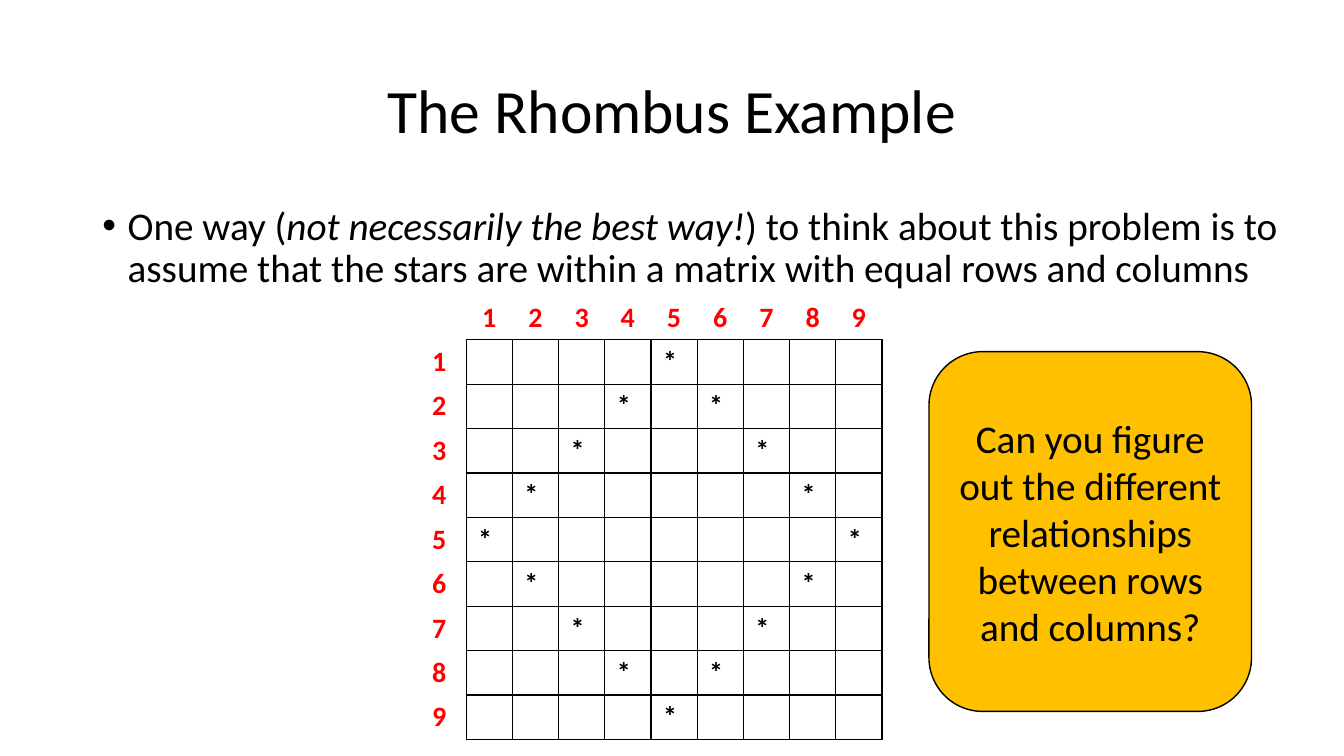
from dataclasses import dataclass

from lxml import etree
from pptx import Presentation
from pptx import util as u
from pptx.dml import color
from pptx.enum import shapes, text
from pptx.oxml import ns


@dataclass(frozen=True)
class Theme:
    font: str = "Calibri"
    ink: str = "000000"
    label: str = "FF0000"
    callout: str = "FFC000"
    title_size: int = 44
    body_size: int = 28
    matrix_size: int = 20
    line_width: int = 1


@dataclass(frozen=True)
class Box:
    left: float
    top: float
    width: float
    height: float


THEME = Theme()
SIDE = 9
SIDES = ("L", "R", "T", "B")


def rgb(value):
    return color.RGBColor.from_string(value)


def place(part, box):
    part.left, part.top = u.Pt(box.left), u.Pt(box.top)
    part.width, part.height = u.Pt(box.width), u.Pt(box.height)


def style(paragraph, size, ink=THEME.ink, bold=False):
    font = paragraph.font
    font.name, font.size, font.bold = THEME.font, u.Pt(size), bold
    font.color.rgb = rgb(ink)


def add_title(slide, box):
    title = slide.shapes.title
    place(title, box)
    title.text_frame.text = "The Rhombus Example"
    title.text_frame.vertical_anchor = text.MSO_ANCHOR.MIDDLE
    title.text_frame.auto_size = text.MSO_AUTO_SIZE.NONE
    heading = title.text_frame.paragraphs[0]
    heading.alignment = text.PP_ALIGN.CENTER
    heading.line_spacing = 0.9
    style(heading, THEME.title_size)


def add_idea(slide, box):
    body = slide.placeholders[1]
    place(body, box)
    body.text_frame.auto_size = text.MSO_AUTO_SIZE.NONE
    idea = body.text_frame.paragraphs[0]
    idea.line_spacing = 0.9
    idea.space_before = u.Pt(10)
    style(idea, THEME.body_size)
    indent = u.Pt(18)
    properties = idea._p.get_or_add_pPr()
    properties.set("marL", str(indent))
    properties.set("indent", str(-indent))
    idea.add_run().text = "One way ("
    aside = idea.add_run()
    aside.text = "not necessarily the best way!"
    aside.font.italic = True
    idea.add_run().text = (
        ") to think about this problem is to assume that the stars "
        "are within a matrix with equal rows and columns"
    )


def set_borders(cell, drawn):
    properties = cell._tc.get_or_add_tcPr()
    for position, side in enumerate(SIDES):
        border = etree.Element(ns.qn(f"a:ln{side}"), w=str(u.Pt(THEME.line_width)))
        if side in drawn:
            fill = etree.SubElement(border, ns.qn("a:solidFill"))
            etree.SubElement(fill, ns.qn("a:srgbClr"), val=THEME.ink)
        else:
            etree.SubElement(border, ns.qn("a:noFill"))
        properties.insert(position, border)


def matrix_content(row, column):
    if row == 0 or column == 0:
        return str(row + column) if row + column else ""
    middle = (SIDE + 1) // 2
    on_rhombus = abs(row - middle) + abs(column - middle) == middle - 1
    return "*" if on_rhombus else ""


def matrix_borders(row, column):
    if row and column:
        return SIDES
    if row:
        return ("R",)
    return ("B",) if column else ()


def add_matrix(slide, box):
    count = SIDE + 1
    frame = slide.shapes.add_table(
        count, count, u.Pt(box.left), u.Pt(box.top), u.Pt(box.width), u.Pt(box.height)
    )
    matrix = frame.table
    matrix.first_row = matrix.horz_banding = False
    for column in matrix.columns:
        column.width = u.Pt(box.width / count)
    for row, line in enumerate(matrix.rows):
        line.height = u.Pt(box.height / count)
        for column, cell in enumerate(line.cells):
            cell.text = matrix_content(row, column)
            cell.margin_left = cell.margin_right = u.Pt(8.64)
            cell.margin_top = cell.margin_bottom = u.Pt(3.6)
            cell.fill.background()
            set_borders(cell, matrix_borders(row, column))
            entry = cell.text_frame.paragraphs[0]
            entry.alignment = text.PP_ALIGN.LEFT if row else text.PP_ALIGN.CENTER
            ink = THEME.ink if row and column else THEME.label
            style(entry, THEME.matrix_size, ink, bold=True)


def add_question(slide, box):
    question = slide.shapes.add_shape(
        shapes.MSO_SHAPE.ROUNDED_RECTANGLE,
        u.Pt(box.left), u.Pt(box.top), u.Pt(box.width), u.Pt(box.height),
    )
    question.shadow.inherit = False
    question.fill.solid()
    question.fill.fore_color.rgb = rgb(THEME.callout)
    question.line.color.rgb = rgb(THEME.ink)
    question.line.width = u.Pt(THEME.line_width)
    frame = question.text_frame
    frame.word_wrap = True
    frame.vertical_anchor = text.MSO_ANCHOR.MIDDLE
    frame.text = (
        "Can you figure out the different relationships between rows and columns?"
    )
    frame.paragraphs[0].alignment = text.PP_ALIGN.CENTER
    style(frame.paragraphs[0], THEME.body_size)


def main():
    deck = Presentation()
    deck.slide_width, deck.slide_height = u.Pt(960), u.Pt(540)
    slide = deck.slides.add_slide(deck.slide_layouts[1])
    add_title(slide, Box(66, 28.75, 828, 104.4))
    add_idea(slide, Box(66, 143.75, 856, 379.5))
    add_matrix(slide, Box(300, 211, 330, 317))
    add_question(slide, Box(663.6, 251.2, 230.4, 257))
    deck.save("out.pptx")


if __name__ == "__main__":
    main()
